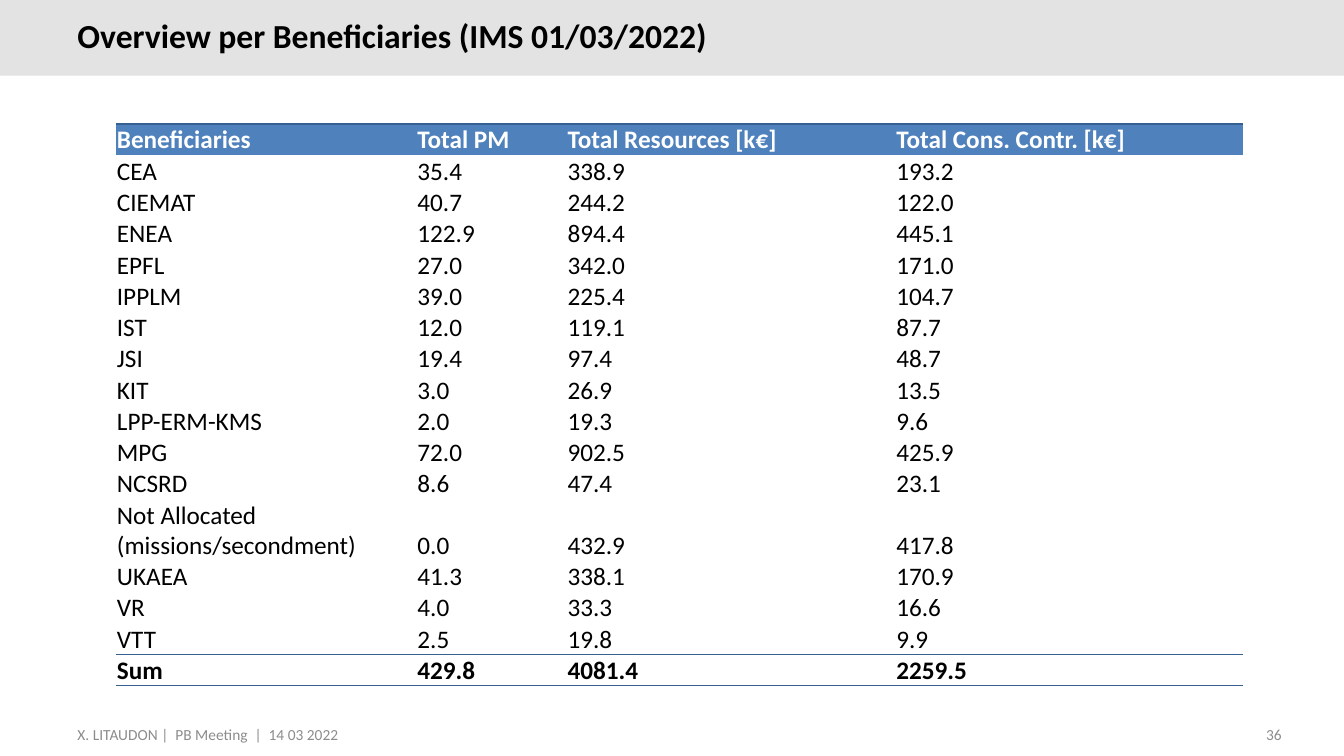
from dataclasses import dataclass

from lxml import etree
from pptx import Presentation
from pptx.dml.color import RGBColor
from pptx.enum.shapes import MSO_SHAPE
from pptx.enum.text import MSO_ANCHOR, PP_ALIGN
from pptx.oxml.ns import qn
from pptx.slide import Slide
from pptx.table import _Cell
from pptx.text.text import _Paragraph
from pptx.util import Inches, Pt

RECTANGLE = MSO_SHAPE.RECTANGLE
TOP, MIDDLE, BOTTOM = MSO_ANCHOR.TOP, MSO_ANCHOR.MIDDLE, MSO_ANCHOR.BOTTOM
LEFT, RIGHT = PP_ALIGN.LEFT, PP_ALIGN.RIGHT
PLAIN_TABLE_STYLE = "{2D5ABB26-0587-4C30-8999-92F81FD0307C}"


@dataclass(frozen=True)
class Theme:
    font: str = "Calibri"
    ink: str = "000000"
    white: str = "FFFFFF"
    muted: str = "8C8C8C"
    band: str = "E3E3E3"
    header: str = "4F81BD"
    rule: str = "366092"
    title_size: int = 24
    table_size: int = 18
    footer_size: int = 11


@dataclass(frozen=True)
class Label:
    text: str
    left: float
    top: float
    width: float
    height: float
    size: int
    color: str
    bold: bool = False
    align: PP_ALIGN = LEFT
    anchor: MSO_ANCHOR = TOP
    line_spacing: int | None = None


@dataclass(frozen=True)
class RowStyle:
    color: str
    bold: bool = False
    fill: str | None = None
    top_rule: float = 0
    bottom_rule: float = 0


THEME = Theme()

LABELS = [
    Label("Overview per Beneficiaries (IMS 01/03/2022)", 0.67, 0.13, 11, 0.5,
          THEME.title_size, THEME.ink, bold=True, anchor=MIDDLE, line_spacing=24),
    Label("X. LITAUDON |  PB Meeting  |  14 03 2022", 0.67, 7.14, 3.8, 0.36,
          THEME.footer_size, THEME.muted),
    Label("36", 12.02, 7.14, 0.79, 0.22, THEME.footer_size, THEME.muted, align=RIGHT),
]

COLUMN_WIDTHS = [2.98, 1.49, 3.26, 3.45]
ROW_HEIGHT = 0.31
BENEFICIARIES = [
    ("Beneficiaries", "Total PM", "Total Resources [k€]", "Total Cons. Contr. [k€]"),
    ("CEA", "35.4", "338.9", "193.2"),
    ("CIEMAT", "40.7", "244.2", "122.0"),
    ("ENEA", "122.9", "894.4", "445.1"),
    ("EPFL", "27.0", "342.0", "171.0"),
    ("IPPLM", "39.0", "225.4", "104.7"),
    ("IST", "12.0", "119.1", "87.7"),
    ("JSI", "19.4", "97.4", "48.7"),
    ("KIT", "3.0", "26.9", "13.5"),
    ("LPP-ERM-KMS", "2.0", "19.3", "9.6"),
    ("MPG", "72.0", "902.5", "425.9"),
    ("NCSRD", "8.6", "47.4", "23.1"),
    ("Not Allocated (missions/secondment)", "0.0", "432.9", "417.8"),
    ("UKAEA", "41.3", "338.1", "170.9"),
    ("VR", "4.0", "33.3", "16.6"),
    ("VTT", "2.5", "19.8", "9.9"),
    ("Sum", "429.8", "4081.4", "2259.5"),
]
BODY = RowStyle(THEME.ink)
ROW_STYLES = {
    0: RowStyle(THEME.white, bold=True, fill=THEME.header, top_rule=1),
    len(BENEFICIARIES) - 2: RowStyle(THEME.ink, bottom_rule=0.5),
    len(BENEFICIARIES) - 1: RowStyle(THEME.ink, bold=True, top_rule=0.5, bottom_rule=1),
}


def set_font(para: _Paragraph, size: int, color: str, bold: bool) -> None:
    para.font.name = THEME.font
    para.font.size = Pt(size)
    para.font.bold = bold
    para.font.color.rgb = RGBColor.from_string(color)


def add_title_band(page: Slide) -> None:
    band = page.shapes.add_shape(RECTANGLE, 0, 0, Inches(13.33), Inches(0.75))
    band.shadow.inherit = False
    band.fill.solid()
    band.fill.fore_color.rgb = RGBColor.from_string(THEME.band)
    band.line.fill.background()


def add_label(page: Slide, label: Label) -> None:
    box = page.shapes.add_textbox(Inches(label.left), Inches(label.top),
                                  Inches(label.width), Inches(label.height))
    frame = box.text_frame
    frame.word_wrap = True
    frame.vertical_anchor = label.anchor
    para = frame.paragraphs[0]
    para.text = label.text
    para.alignment = label.align
    if label.line_spacing:
        para.line_spacing = Pt(label.line_spacing)
    set_font(para, label.size, label.color, label.bold)


def add_rule(cell: _Cell, tag: str, points: float) -> None:
    """Draw one cell border; call before filling, as borders precede the fill."""
    properties = cell._tc.get_or_add_tcPr()
    line = etree.SubElement(properties, qn(tag), w=str(Pt(points)))
    fill = etree.SubElement(line, qn("a:solidFill"))
    etree.SubElement(fill, qn("a:srgbClr"), val=THEME.rule)


def fill_cell(cell: _Cell, text: str, style: RowStyle) -> None:
    cell.margin_left = cell.margin_top = cell.margin_right = Inches(0.01)
    cell.margin_bottom = 0
    cell.vertical_anchor = BOTTOM
    for tag, points in (("a:lnT", style.top_rule), ("a:lnB", style.bottom_rule)):
        if points:
            add_rule(cell, tag, points)
    if style.fill:
        cell.fill.solid()
        cell.fill.fore_color.rgb = RGBColor.from_string(style.fill)
    else:
        cell.fill.background()
    para = cell.text_frame.paragraphs[0]
    para.text = text
    set_font(para, THEME.table_size, style.color, style.bold)


def add_beneficiary_table(page: Slide) -> None:
    row_count = len(BENEFICIARIES)
    frame = page.shapes.add_table(
        row_count, len(COLUMN_WIDTHS), Inches(1.15), Inches(1.23),
        Inches(sum(COLUMN_WIDTHS)), Inches(ROW_HEIGHT * row_count))
    table = frame.table
    table.horz_banding = False
    table._tbl.tblPr.find(qn("a:tableStyleId")).text = PLAIN_TABLE_STYLE
    for column, width in zip(table.columns, COLUMN_WIDTHS):
        column.width = Inches(width)
    for index, (row, values) in enumerate(zip(table.rows, BENEFICIARIES)):
        row.height = Inches(ROW_HEIGHT)
        for cell, value in zip(row.cells, values):
            fill_cell(cell, value, ROW_STYLES.get(index, BODY))


def main() -> None:
    deck = Presentation()
    deck.slide_width, deck.slide_height = Inches(13.33), Inches(7.5)
    page = deck.slides.add_slide(deck.slide_layouts[6])
    add_title_band(page)
    for label in LABELS:
        add_label(page, label)
    add_beneficiary_table(page)
    deck.save("out.pptx")


if __name__ == "__main__":
    main()
